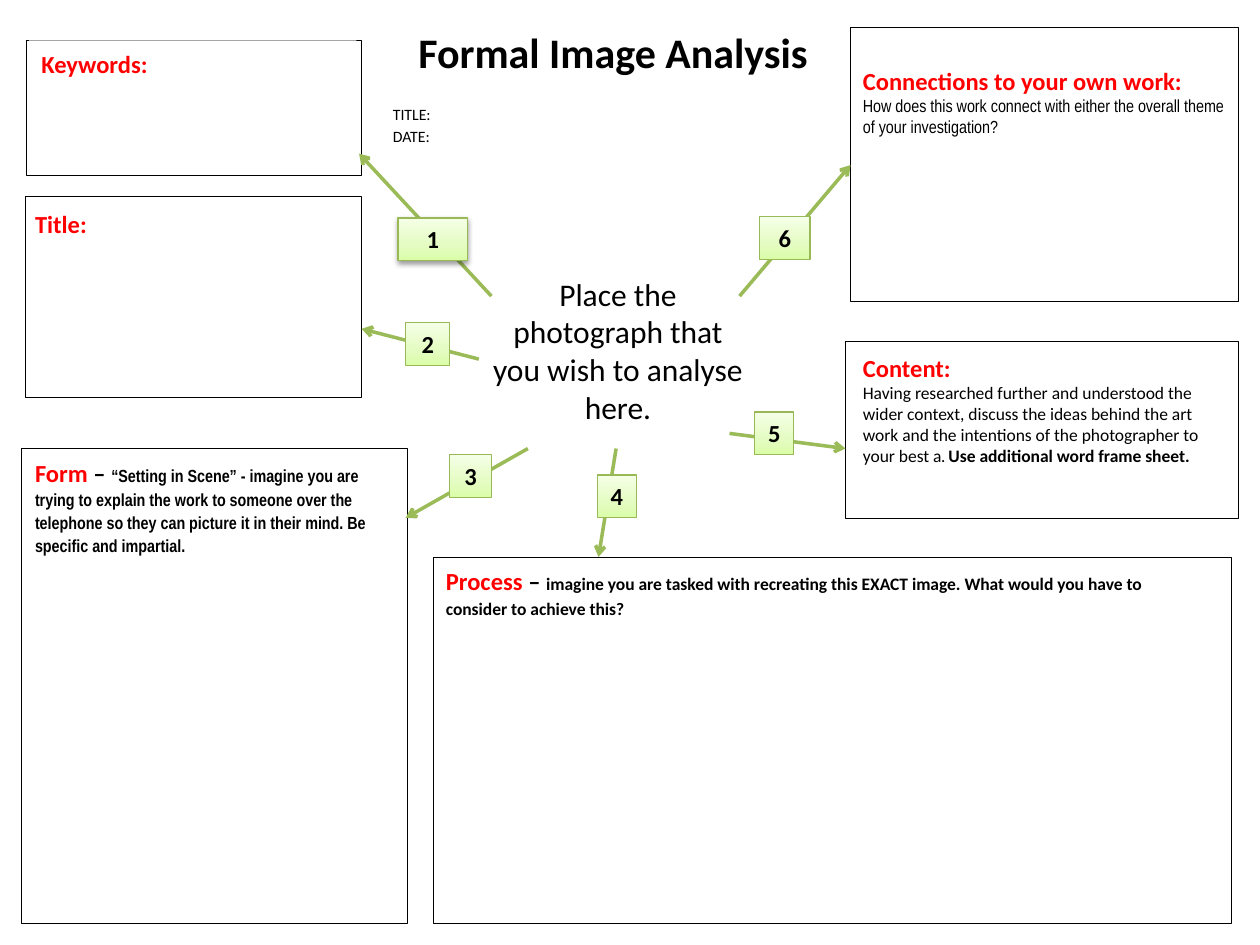
from copy import deepcopy
from dataclasses import dataclass

from lxml import etree
from pptx import Presentation
from pptx import util as u
from pptx.dml.color import RGBColor
from pptx.enum import shapes, text
from pptx.oxml import ns


@dataclass(frozen=True)
class Theme:
    black: str = "000000"
    white: str = "FFFFFF"
    red: str = "FF0000"
    green: str = "9BBB59"
    edge: str = "98B955"
    shades: tuple = ((0, "DAFDA7"), (0.35, "E4FCC2"), (1, "F5FFE7"))
    font: str = "Calibri"
    slim: str = "Arial Narrow"
    title: float = 24
    prompt: float = 18
    head: float = 14
    body: float = 10
    small: float = 9
    dot: float = 8


T = Theme()
HEAD = dict(size=T.head, bold=True, color=T.red)
DASH = dict(size=T.head, bold=True)
BODY = dict(size=T.body)
BOLD = dict(size=T.body, bold=True)
SLIM = dict(size=T.body, name=T.slim)
SMALL = dict(size=T.small)


class Sheet:
    def __init__(self, deck, theme):
        self.theme = theme
        self.slide = deck.slides.add_slide(deck.slide_layouts[5])

    def put(self, shape, paras, align="LEFT", wrap=True):
        """Fill a shape with (line spacing, [(words, format), ...]) paragraphs."""
        frame = shape.text_frame
        frame.word_wrap = wrap
        frame.auto_size = text.MSO_AUTO_SIZE.SHAPE_TO_FIT_TEXT
        frame.vertical_anchor = text.MSO_ANCHOR.TOP
        for i, (gap, runs) in enumerate(paras):
            para = frame.add_paragraph() if i else frame.paragraphs[0]
            para.alignment = text.PP_ALIGN[align]
            para.line_spacing = gap
            for words, form in runs:
                run = para.add_run()
                run.text = words
                look = {"name": self.theme.font, "bold": False, **form}
                look["size"] = u.Pt(look["size"])
                tint = look.pop("color", self.theme.black)
                for key, val in look.items():
                    setattr(run.font, key, val)
                run.font.color.rgb = RGBColor.from_string(tint)

    def title(self, words, *box):
        shape = self.slide.shapes.title
        for key, val in zip(("left", "top", "width", "height"), box):
            setattr(shape, key, u.Inches(val))
        self.put(shape, [(1, [(words, dict(size=self.theme.title, bold=True))])],
                 wrap=False)

    def rect(self, box, line=None, width=0.25, fill=None):
        shape = self.slide.shapes.add_shape(
            shapes.MSO_SHAPE.RECTANGLE, *map(u.Inches, box))
        shape.shadow.inherit = False
        for part, tint in ((shape.fill, fill), (shape.line.fill, line)):
            if tint:
                part.solid()
                part.fore_color.rgb = RGBColor.from_string(tint)
            else:
                part.background()
        if line:
            shape.line.width = u.Pt(width)
        return shape

    def note(self, box, paras, align="LEFT", fill=None):
        if fill:
            shape = self.rect(box, fill=fill)
        else:
            shape = self.slide.shapes.add_textbox(*map(u.Inches, box))
        self.put(shape, paras, align)

    def arrow(self, start, end):
        line = self.slide.shapes.add_connector(
            shapes.MSO_CONNECTOR.STRAIGHT, *map(u.Inches, start + end))
        line.line.width = u.Pt(2)
        line.line.color.rgb = RGBColor.from_string(self.theme.green)
        tail = etree.SubElement(line.line._get_or_add_ln(), ns.qn("a:tailEnd"))
        tail.set("type", "arrow")
        etree.SubElement(line._element.spPr, ns.qn("a:effectLst"))

    def badge(self, label, box, shadow=False):
        shape = self.rect(box, self.theme.edge, 0.75)
        # Three-stop gradient, darkest at the foot
        shape.fill.gradient()
        shape.fill.gradient_angle = 90
        stops = shape._element.spPr.find(".//" + ns.qn("a:gsLst"))
        stops.insert(1, deepcopy(stops[0]))
        for stop, (pos, tint) in zip(shape.fill.gradient_stops, self.theme.shades):
            stop.position = pos
            stop.color.rgb = RGBColor.from_string(tint)
        if shadow:
            effects = shape._element.spPr.find(ns.qn("a:effectLst"))
            drop = etree.SubElement(
                effects, ns.qn("a:outerShdw"), blurRad=str(u.Pt(3.1)),
                dist=str(u.Pt(1.6)), dir="5400000", rotWithShape="0")
            tint = etree.SubElement(drop, ns.qn("a:srgbClr"), val=self.theme.black)
            etree.SubElement(tint, ns.qn("a:alpha"), val="38000")
        self.put(shape, [(1, [(label, DASH)])], "CENTER")


# Bordered panels: box, fill
PANELS = [
    ((0.21, 0.32, 2.66, 1.07), None),
    ((0.2, 1.56, 2.67, 1.59), None),
    ((0.17, 3.56, 3.06, 3.77), None),
    ((3.44, 4.42, 6.33, 2.91), None),
    ((6.75, 0.22, 3.08, 2.17), None),
    ((6.71, 2.71, 3.12, 1.4), None),
]

# Text: box, paragraphs, alignment, fill
NOTES = [
    ((0.23, 0.32, 2.6, 0.36), [(1.1, [("Keywords:", HEAD)])], "LEFT", T.white),
    ((0.18, 1.56, 2.65, 0.38), [(1.2, [("Title:", HEAD)])], "LEFT", None),
    ((0.18, 3.56, 2.84, 1.08), [(1.1, [
        ("Form", HEAD), (" – ", DASH),
        ("“Setting in Scene” - imagine you are trying to explain the work to "
         "someone over the telephone so they can picture it in their mind. "
         "Be specific and impartial.", {**SLIM, "bold": True})])], "LEFT", None),
    ((3.44, 4.42, 5.74, 0.91), [(1.1, [
        ("Process", HEAD), (" – ", DASH),
        ("imagine you are tasked with recreating this EXACT image. What would "
         "you have to consider to achieve this?", BOLD)])], "LEFT", None),
    ((3.02, 0.75, 2.77, 0.64), [(1.2, [("TITLE:", SMALL)]),
                                (1.2, [("DATE:", SMALL)])], "LEFT", None),
    ((6.75, 0.45, 3.08, 0.7), [
        (1.1, [("Connections to your own work:", HEAD)]),
        (1, [("How does this work connect with either the overall theme of "
              "your investigation?", SLIM)])], "LEFT", None),
    ((6.75, 2.75, 3.02, 1.04), [
        (1, [("Content:", HEAD)]),
        (1, [("Having researched further and understood the wider context, "
              "discuss the ideas behind the art work and the intentions of "
              "the photographer to your best a", BODY),
             (". ", dict(size=T.dot, bold=True, italic=True)),
             ("Use additional word frame sheet.", BOLD)])], "LEFT", T.white),
    ((3.78, 2.13, 2.25, 1.31), [
        (1, [("Place the photograph that you wish to analyse here.",
              dict(size=T.prompt))])], "CENTER", None),
]

# Numbered arrows: start, end, badge left, top, width
STEPS = [
    ((3.9, 2.35), (2.85, 1.22), 3.16, 1.73, 0.55),
    ((3.8, 2.85), (2.87, 2.61), 3.22, 2.56, 0.35),
    ((4.19, 3.56), (3.22, 4.11), 3.57, 3.61, 0.33),
    ((4.89, 3.56), (4.75, 4.42), 4.74, 3.77, 0.31),
    ((5.79, 3.44), (6.71, 3.56), 5.99, 3.27, 0.31),
    ((5.87, 2.35), (6.75, 1.31), 6.03, 1.72, 0.4),
]


def main():
    deck = Presentation()
    deck.slide_width, deck.slide_height = u.Inches(10), u.Inches(7.5)
    sheet = Sheet(deck, T)
    sheet.title("Formal Image Analysis", 3.22, 0.16, 3.32, 0.5)
    for box, fill in PANELS:
        sheet.rect(box, T.black, fill=fill)
    for note in NOTES:
        sheet.note(*note)
    for num, (start, end, left, top, width) in enumerate(STEPS, 1):
        sheet.arrow(start, end)
        sheet.badge(str(num), (left, top, width, 0.34), shadow=num == 1)
    deck.save("out.pptx")


if __name__ == "__main__":
    main()
